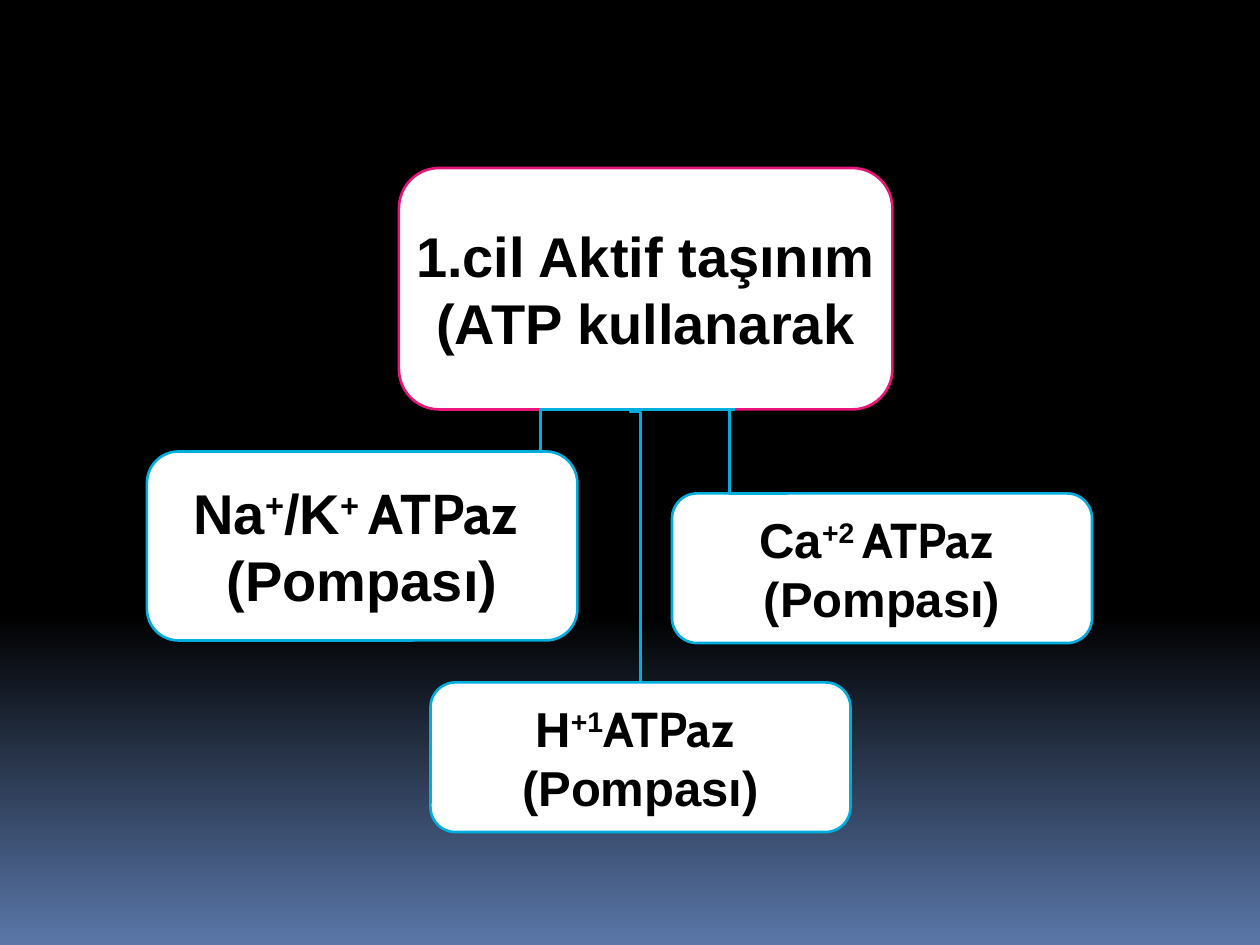
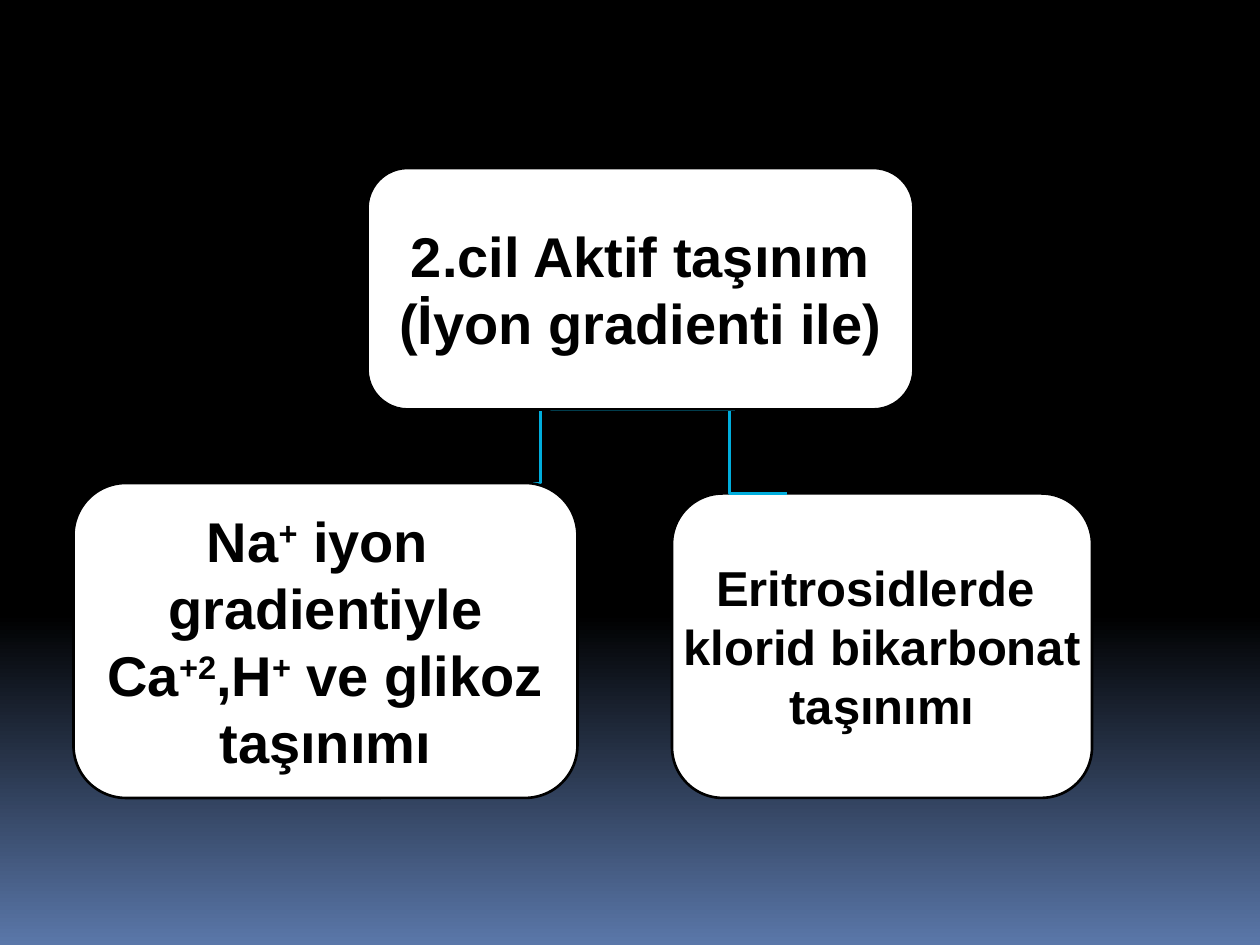
from dataclasses import dataclass

from pptx import Presentation
from pptx.dml.color import RGBColor
from pptx.enum.shapes import MSO_CONNECTOR as Connector, MSO_SHAPE as Shape
from pptx.enum.text import MSO_ANCHOR as Anchor, PP_ALIGN as Align
from pptx.oxml.ns import qn
from pptx.util import Inches, Pt


@dataclass(frozen=True)
class Theme:
    black: RGBColor = RGBColor(0x00, 0x00, 0x00)
    white: RGBColor = RGBColor(0xFF, 0xFF, 0xFF)
    horizon: RGBColor = RGBColor(0x5A, 0x77, 0xA9)
    cyan: RGBColor = RGBColor(0x00, 0xAD, 0xDC)
    pink: RGBColor = RGBColor(0xEA, 0x15, 0x7A)
    font: str = "Arial"
    enzyme_font: str = "Cabin"
    large: int = 32
    medium: int = 28
    line: float = 1.5


@dataclass(frozen=True)
class Span:
    text: str
    raised: bool = False
    font: str | None = None


THEME = Theme()
UNIT = Inches(1) // 12  # the page is a grid of 120 columns by 90 rows
COLUMNS, ROWS = 120, 90


def sup(text):
    return Span(text, raised=True)


class Diagram:
    """Draws boxes and elbow lines on the current slide."""

    def __init__(self, theme):
        self.theme = theme
        self.deck = Presentation()
        self.deck.slide_width = COLUMNS * UNIT
        self.deck.slide_height = ROWS * UNIT
        self.page = None
        self.paint_background()

    def paint_background(self):
        fill = self.deck.slide_master.background.fill
        fill.gradient()
        fill.gradient_angle = 270
        stops = ((0.65, self.theme.black), (1, self.theme.horizon))
        for stop, (position, color) in zip(fill.gradient_stops, stops):
            stop.color.rgb = color
            stop.position = position

    def new_page(self):
        self.page = self.deck.slides.add_slide(self.deck.slide_layouts[6])

    def stroke(self, line, color):
        line.color.rgb = color
        line.width = Pt(self.theme.line)

    def box(self, column, row, width, height, lines, size, outline):
        box = self.page.shapes.add_shape(
            Shape.ROUNDED_RECTANGLE,
            *(int(n * UNIT) for n in (column, row, width, height)))
        box.shadow.inherit = False
        box.fill.solid()
        box.fill.fore_color.rgb = self.theme.white
        self.stroke(box.line, outline)
        frame = box.text_frame
        frame.word_wrap = False
        frame.vertical_anchor = Anchor.MIDDLE
        frame.margin_left = frame.margin_right = 0
        frame.margin_top = frame.margin_bottom = 0
        for index, spans in enumerate(lines):
            para = frame.add_paragraph() if index else frame.paragraphs[0]
            self.fill_para(para, spans, size)

    def fill_para(self, para, spans, size):
        para.alignment = Align.CENTER
        para.font.name = self.theme.font
        para.font.size = Pt(size)
        para.font.bold = True
        para.font.color.rgb = self.theme.black
        for item in spans:
            span = item if isinstance(item, Span) else Span(item)
            run = para.add_run()
            run.text = span.text
            if span.font:
                run.font.name = span.font
            if span.raised:
                run.font._element.set("baseline", "30000")

    def elbow(self, begin, end, bend=0.5, upright=False):
        (x1, y1), (x2, y2) = begin, end
        if upright:  # a quarter turn about the middle makes it leave vertically
            middle_x, middle_y = (x1 + x2) / 2, (y1 + y2) / 2
            x1, y1 = middle_x - (y1 - middle_y), middle_y + (x1 - middle_x)
            x2, y2 = 2 * middle_x - x1, 2 * middle_y - y1
        link = self.page.shapes.add_connector(
            Connector.ELBOW, *(int(n * UNIT) for n in (x1, y1, x2, y2)))
        self.stroke(link.line, self.theme.cyan)
        properties = link._element.spPr
        properties.append(properties.makeelement(qn("a:effectLst"), {}))
        if upright:
            properties.find(qn("a:xfrm")).set("rot", "16200000")
        guides = properties.find(qn("a:prstGeom")).get_or_add_avLst()
        guides.append(guides.makeelement(
            qn("a:gd"), {"name": "adj1", "fmla": f"val {bend * 100000:.0f}"}))

    def left_branch(self):
        self.elbow((33, 46), (70, 39))

    def right_branch(self):
        self.elbow((75, 47), (64, 39))


def primary_transport(diagram):
    theme = diagram.theme
    enzyme = Span("ATPaz ", font=theme.enzyme_font)
    pump = ["(Pompası)"]
    diagram.new_page()
    # Proton pump, below the middle
    diagram.box(41, 65, 40, 14.25, [["H", sup("+1"), enzyme], pump],
                theme.medium, theme.cyan)
    diagram.elbow((61, 65), (60, 37), bend=0.92, upright=True)
    # Heading and the two side pumps
    diagram.box(38, 16, 47, 23, [["1.cil Aktif taşınım"], ["(ATP kullanarak"]],
                theme.large, theme.pink)
    diagram.left_branch()
    diagram.box(14, 43, 41, 18,
                [["Na", sup("+"), "/K", sup("+ "), enzyme], pump],
                theme.large, theme.cyan)
    diagram.box(64, 47, 40, 14.25, [["Ca", sup("+2 "), enzyme], pump],
                theme.medium, theme.cyan)
    diagram.right_branch()


def secondary_transport(diagram):
    theme = diagram.theme
    diagram.new_page()
    # Ion gradient, left
    diagram.left_branch()
    diagram.box(7, 46, 48, 30,
                [["Na", sup("+"), " iyon "], ["gradientiyle"],
                 ["Ca", sup("+2"), ",H", sup("+"), " ve glikoz"], ["taşınımı"]],
                theme.large, theme.black)
    # Red blood cells, right
    diagram.box(64, 47, 40, 29,
                [["Eritrosidlerde "], ["klorid bikarbonat"], ["taşınımı"]],
                theme.medium, theme.black)
    diagram.right_branch()
    # Heading
    diagram.box(35, 16, 52, 23,
                [["2.cil Aktif taşınım"], ["(İyon gradienti ile)"]],
                theme.large, theme.black)


def main():
    diagram = Diagram(THEME)
    primary_transport(diagram)
    secondary_transport(diagram)
    diagram.deck.save("out.pptx")


if __name__ == "__main__":
    main()
